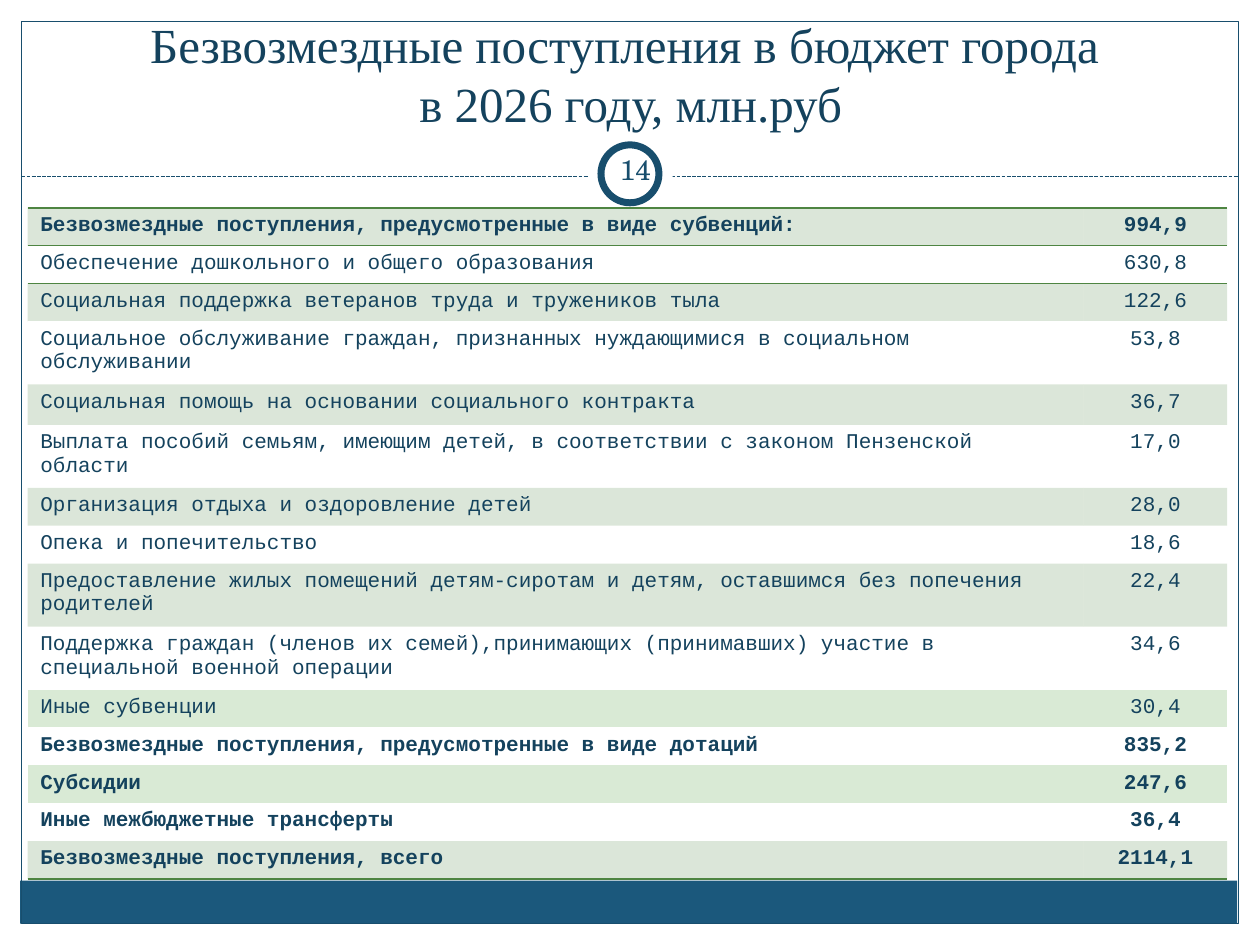
from lxml.etree import SubElement
from pptx import Presentation
from pptx.dml.color import RGBColor
from pptx.enum.dml import MSO_LINE
from pptx.enum.shapes import MSO_CONNECTOR, MSO_SHAPE
from pptx.enum.text import MSO_ANCHOR as Anchor, PP_ALIGN as Align
from pptx.oxml import parse_xml
from pptx.oxml.ns import nsdecls, qn
from pptx.util import Inches, Pt

COLORS = {
    "white": "FFFFFF",
    "band": "1B587C",
    "frame": "184E6D",
    "text": "14425D",
    "green": "4E8542",
    "light_green": "D9EAD5",
}
NO_STYLE = "{2D5ABB26-0587-4C30-8999-92F81FD0307C}"

# Label, amount, row height
INCOME = [
    ("Безвозмездные поступления, предусмотренные в виде субвенций:", "994,9", 0.29),
    ("Обеспечение дошкольного и общего образования", "630,8", 0.29),
    ("Социальная поддержка ветеранов труда и тружеников тыла", "122,6", 0.29),
    ("Социальное обслуживание граждан, признанных нуждающимися в социальном обслуживании",
     "53,8", 0.43),
    ("Социальная помощь на основании социального контракта", "36,7", 0.32),
    ("Выплата пособий семьям, имеющим детей, в соответствии с законом Пензенской области",
     "17,0", 0.43),
    ("Организация отдыха и оздоровление детей", "28,0", 0.29),
    ("Опека и попечительство", "18,6", 0.29),
    ("Предоставление жилых помещений детям-сиротам и детям, оставшимся без попечения родителей",
     "22,4", 0.49),
    ("Поддержка граждан (членов их семей),принимающих (принимавших) участие в специальной "
     "военной операции", "34,6", 0.49),
    ("Иные субвенции", "30,4", 0.3),
    ("Безвозмездные поступления, предусмотренные в виде дотаций", "835,2", 0.29),
    ("Субсидии", "247,6", 0.29),
    ("Иные межбюджетные трансферты", "36,4", 0.29),
    ("Безвозмездные поступления, всего", "2114,1", 0.29),
]
LAST = len(INCOME) - 1
BOLD_ROWS = {0, *range(11, LAST + 1)}
LIGHT_ROWS = {10, 12}
BORDERS = {0: ("lnT", "lnB"), 1: ("lnT",), LAST: ("lnB",)}


def rgb(name):
    return RGBColor.from_string(COLORS[name])


class SlideBuilder:
    def __init__(self, slide):
        self.slide = slide

    def shape(self, kind, left, top, width, height, fill=None, line=None, weight=0.75):
        item = self.slide.shapes.add_shape(
            kind, Inches(left), Inches(top), Inches(width), Inches(height))
        item.shadow.inherit = False
        if fill:
            item.fill.solid()
            item.fill.fore_color.rgb = rgb(fill)
        else:
            item.fill.background()
        if line:
            item.line.color.rgb = rgb(line)
            item.line.width = Pt(weight)
        else:
            item.line.fill.background()

    def dashed_line(self, left, right, y):
        divider = self.slide.shapes.add_connector(
            MSO_CONNECTOR.STRAIGHT, Inches(left), Inches(y), Inches(right), Inches(y))
        divider.line.color.rgb = rgb("frame")
        divider.line.width = Pt(0.75)
        divider.line.dash_style = MSO_LINE.SQUARE_DOT
        SubElement(divider._element.spPr, qn("a:effectLst"))

    def run(self, paragraph, words, size, font, color="text", bold=False):
        run = paragraph.add_run()
        run.text = words
        run.font.size = Pt(size)
        run.font.name = font
        run.font.bold = bold
        run.font.color.rgb = rgb(color)

    def text(self, left, top, width, height, lines, size, font, color, align, anchor,
             left_inset=0.1, right_inset=0.1):
        frame = self.slide.shapes.add_textbox(
            Inches(left), Inches(top), Inches(width), Inches(height)).text_frame
        frame.word_wrap = True
        frame.vertical_anchor = anchor
        frame.margin_left, frame.margin_right = Inches(left_inset), Inches(right_inset)
        paragraph = frame.paragraphs[0]
        paragraph.alignment = align
        for index, line in enumerate(lines):
            if index:
                paragraph.add_line_break()
            self.run(paragraph, line, size, font, color)

    def border(self, cell, sides):
        """Draw thin green lines; they must precede the fill in the cell properties."""
        for position, side in enumerate(sides):
            cell._tc.get_or_add_tcPr().insert(position, parse_xml(
                f'<a:{side} {nsdecls("a")} w="12700"><a:solidFill>'
                f'<a:srgbClr val="{COLORS["green"]}"/></a:solidFill></a:{side}>'))

    def fill_cell(self, cell, row):
        """Alternate pale green and white, with two rows in a solid light green."""
        if row in LIGHT_ROWS:
            color = "light_green"
        else:
            color = "white" if row % 2 else "green"
        cell.fill.solid()
        cell.fill.fore_color.rgb = rgb(color)
        if color == "green":
            tint = cell._tc.tcPr.find(".//" + qn("a:srgbClr"))
            SubElement(tint, qn("a:alpha")).set("val", "20000")

    def table(self, left, top, widths, rows):
        heights = [height for *_, height in rows]
        table = self.slide.shapes.add_table(
            len(rows), len(widths), Inches(left), Inches(top),
            Inches(sum(widths)), Inches(sum(heights))).table
        table.first_row = table.horz_banding = False
        table._tbl.tblPr.find(qn("a:tableStyleId")).text = NO_STYLE
        for column, width in zip(table.columns, widths):
            column.width = Inches(width)
        for row, (label, amount, height) in enumerate(rows):
            table.rows[row].height = Inches(height)
            for column, (words, align) in enumerate(
                    [(label, Align.LEFT), (amount, Align.CENTER)]):
                cell = table.cell(row, column)
                paragraph = cell.text_frame.paragraphs[0]
                paragraph.alignment = align
                self.run(paragraph, words, 12, "Courier New", bold=row in BOLD_ROWS)
                self.fill_cell(cell, row)
                self.border(cell, BORDERS.get(row, ()))


def main():
    deck = Presentation()
    deck.slide_width, deck.slide_height = Inches(10), Inches(7.5)
    page = SlideBuilder(deck.slides.add_slide(deck.slide_layouts[6]))

    page.shape(MSO_SHAPE.RECTANGLE, 0.16, 6.99, 9.66, 0.34, fill="band")
    page.shape(MSO_SHAPE.RECTANGLE, 0.17, 0.17, 9.66, 7.16, line="frame")
    page.dashed_line(0.17, 9.83, 1.4)
    page.shape(MSO_SHAPE.OVAL, 4.67, 1.05, 0.67, 0.67, fill="white")
    page.shape(MSO_SHAPE.OVAL, 4.77, 1.15, 0.46, 0.46, fill="white", line="frame", weight=4)
    page.text(0.33, 0.25, 9.35, 0.85,
              ["Безвозмездные поступления в бюджет города ", "в 2026 году, млн.руб"],
              28, "Times New Roman", "text", Align.CENTER, Anchor.BOTTOM)
    page.text(4.75, 1.1, 0.5, 0.48, ["14"], 16, "TeX Gyre Schola", "frame",
              Align.LEFT, Anchor.MIDDLE, left_inset=0.17, right_inset=0.05)
    page.table(0.22, 1.65, [8.38, 1.14], INCOME)

    deck.save("out.pptx")


if __name__ == "__main__":
    main()
